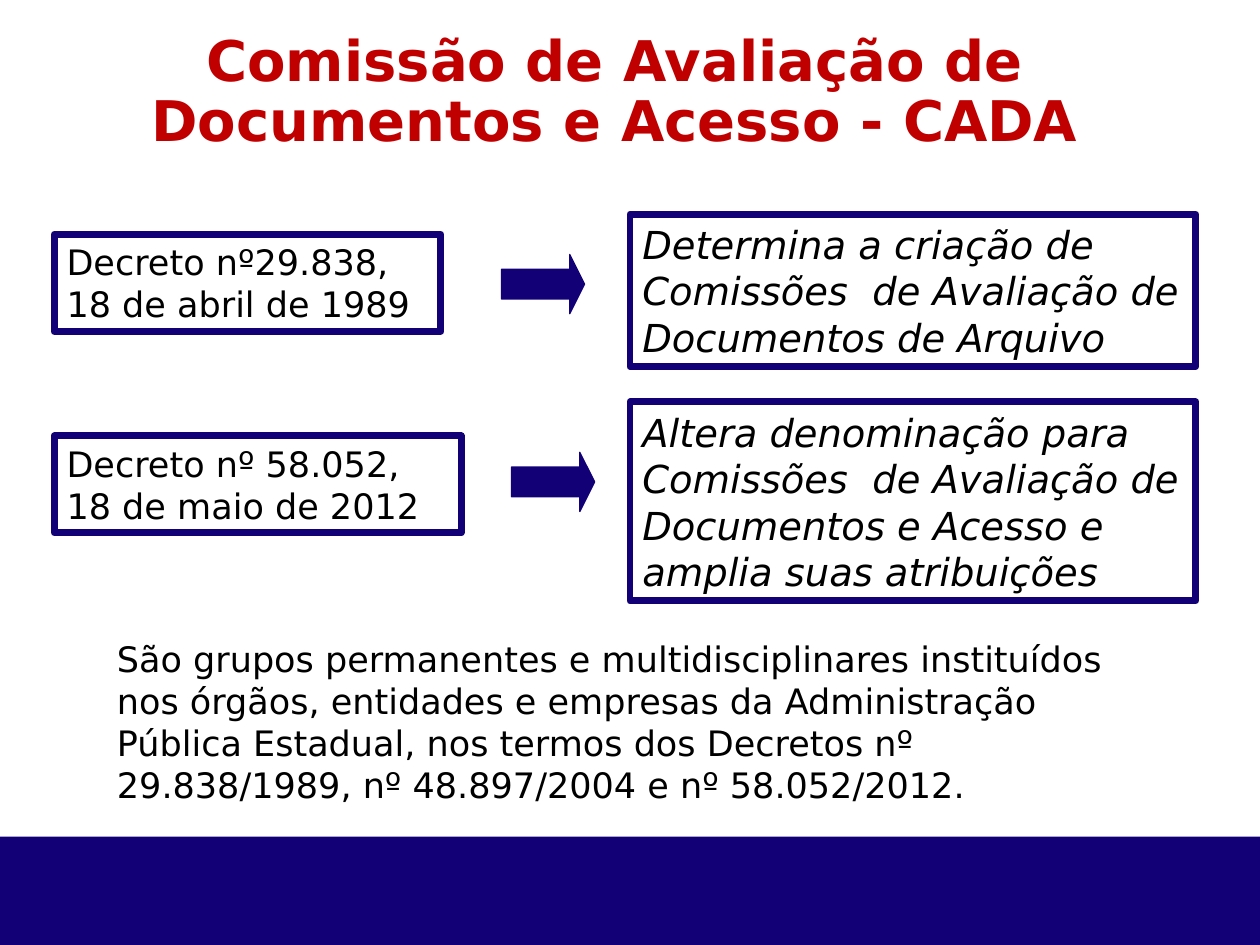
from pptx import Presentation
from pptx.dml.color import RGBColor
from pptx.enum.shapes import MSO_SHAPE
from pptx.enum.text import MSO_ANCHOR, PP_ALIGN
from pptx.util import Inches, Pt

RECT = MSO_SHAPE.RECTANGLE
ARROW = MSO_SHAPE.RIGHT_ARROW
TOP, MIDDLE = MSO_ANCHOR.TOP, MSO_ANCHOR.MIDDLE
LEFT, CENTER = PP_ALIGN.LEFT, PP_ALIGN.CENTER

FONT = "DejaVu Sans"
COLORS = {"navy": "110076", "red": "C00000", "black": "000000"}


def color(name):
    return RGBColor.from_string(COLORS[name])


def write(shape, text, size=20, ink="black", bold=False, italic=False,
          align=LEFT, anchor=TOP, spacing=None):
    frame = shape.text_frame
    frame.word_wrap = True
    frame.vertical_anchor = anchor
    para = frame.paragraphs[0]
    para.alignment = align
    if spacing:
        para.line_spacing = spacing
    run = para.add_run()
    run.text = text
    font = run.font
    font.name, font.size = FONT, Pt(size)
    font.bold, font.italic = bold, italic
    font.color.rgb = color(ink)


def add_shape(slide, kind, box, fill=None, line=None):
    shape = slide.shapes.add_shape(kind, *map(Inches, box))
    shape.shadow.inherit = False
    if fill:
        shape.fill.solid()
        shape.fill.fore_color.rgb = color(fill)
    else:
        shape.fill.background()
    if line:
        shape.line.color.rgb = color("navy")
        shape.line.width = Pt(line)
    else:
        shape.line.fill.background()
    return shape


def add_label(slide, box, text, **style):
    write(slide.shapes.add_textbox(*map(Inches, box)), text, **style)


def add_frame(slide, box, text, **style):
    write(add_shape(slide, RECT, box, line=4), text, anchor=MIDDLE, **style)


def add_arrow(slide, left, top):
    arrow = add_shape(slide, ARROW, (left, top, 0.66, 0.47), "navy", 0.75)
    arrow.adjustments[0] = 0.5
    arrow.adjustments[1] = 0.25


def add_step(slide, decree, start, effect, goal):
    add_frame(slide, (0.43, *decree, 0.77), start)
    add_arrow(slide, *effect)
    top, height, text = goal
    add_frame(slide, (5, top, 4.49, height), text, size=22, italic=True)


def main():
    deck = Presentation()
    deck.slide_width, deck.slide_height = Inches(10), Inches(7.5)
    slide = deck.slides.add_slide(deck.slide_layouts[6])

    add_shape(slide, RECT, (0, 6.64, 10, 0.86), "navy")
    add_label(slide, (0.98, 0.21, 7.8, 1.07),
              "Comissão de Avaliação de Documentos e Acesso - CADA",
              size=32, ink="red", bold=True, align=CENTER, spacing=0.9)
    add_step(slide, (1.86, 3.07), "Decreto nº29.838, 18 de abril de 1989",
             (3.98, 2.02),
             (1.7, 1.21, "Determina a criação de Comissões  de Avaliação "
                         "de Documentos de Arquivo"))
    add_step(slide, (3.46, 3.23), "Decreto nº 58.052, 18 de maio de 2012",
             (4.06, 3.59),
             (3.19, 1.58, "Altera denominação para Comissões  de Avaliação "
                          "de Documentos e Acesso e amplia suas atribuições"))
    add_label(slide, (0.83, 5.01, 8.44, 1.34),
              "São grupos permanentes e multidisciplinares instituídos nos "
              "órgãos, entidades e empresas da Administração Pública "
              "Estadual, nos termos dos Decretos nº 29.838/1989, "
              "nº 48.897/2004 e nº 58.052/2012.")
    deck.save("out.pptx")


if __name__ == "__main__":
    main()
